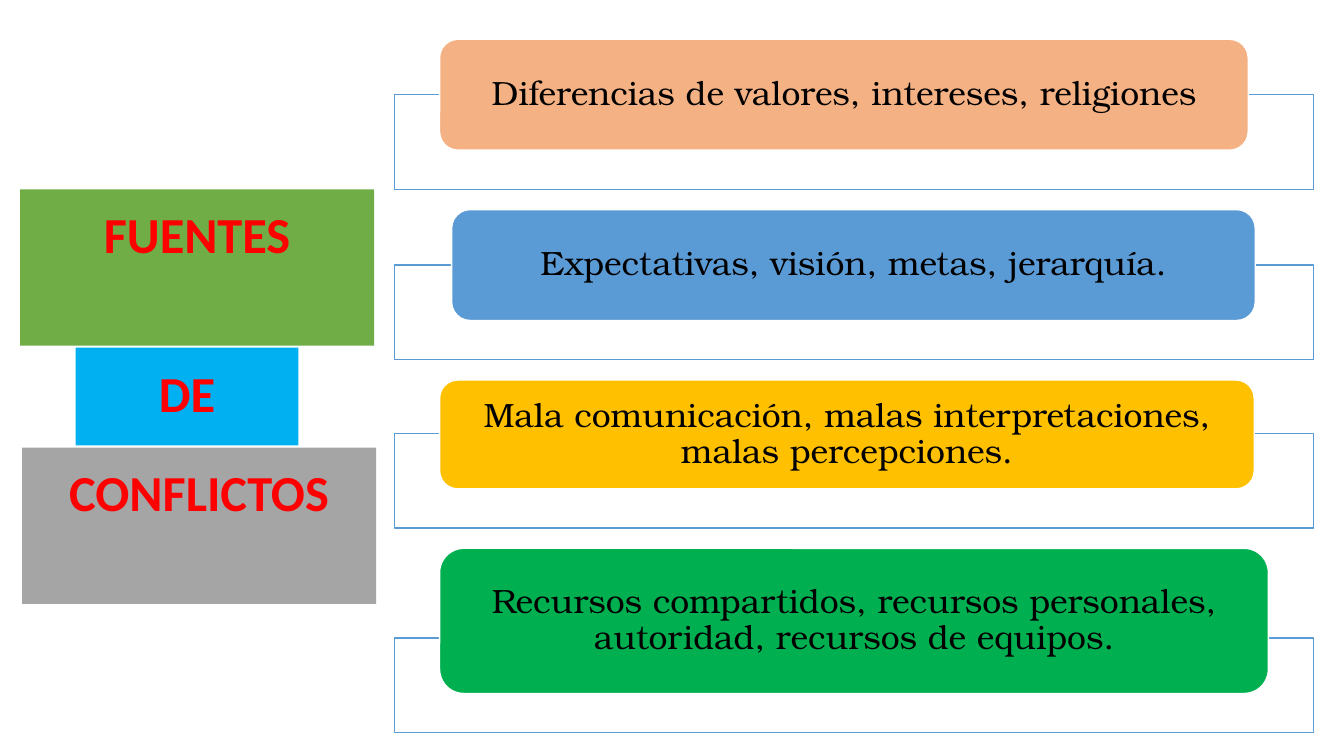
from dataclasses import dataclass
from typing import Any, Optional

from lxml import etree
from pptx import Presentation
from pptx import util as u
from pptx.dml.color import RGBColor
from pptx.enum import shapes, text
from pptx.oxml import ns

COLORS = {
    "green": "70AD47", "cyan": "00B0F0", "gray": "A5A5A5",
    "peach": "F4B183", "blue": "5B9BD5", "amber": "FFC000", "emerald": "00B050",
    "white": "FFFFFF", "red": "FF0000", "black": "000000",
}

FRAME_LEFT, FRAME_WIDTH, FRAME_HEIGHT = 3.91, 9.12, 0.94
FRAME_OVERLAP = 0.55  # how far each bar reaches down into its frame

TITLE_FORMAT = {
    "frame": {"word_wrap": False, "vertical_anchor": text.MSO_ANCHOR.TOP},
    "paragraph": {"alignment": text.PP_ALIGN.CENTER, "line_spacing": 1.15,
                  "space_after": u.Pt(10)},
    "font": {"name": "Calibri", "size": u.Pt(36), "bold": True},
    "color": "red",
}
SOURCE_FORMAT = {
    "frame": {"word_wrap": True, "vertical_anchor": text.MSO_ANCHOR.MIDDLE,
              "margin_left": u.Inches(0.24), "margin_right": u.Inches(0.24),
              "margin_top": 0, "margin_bottom": 0},
    "paragraph": {"alignment": text.PP_ALIGN.CENTER, "line_spacing": 0.9},
    "font": {"name": "TeX Gyre Bonum", "size": u.Pt(24)},
    "color": "black",
}


@dataclass
class Block:
    words: str
    left: float
    top: float
    width: float
    height: float
    fill: str


TITLE_BLOCKS = [
    Block("FUENTES", 0.2, 1.88, 3.51, 1.55, "green"),
    Block("DE", 0.75, 3.45, 2.21, 0.97, "cyan"),
    Block("CONFLICTOS", 0.22, 4.44, 3.51, 1.55, "gray"),
]
CONFLICT_SOURCES = [
    Block("Diferencias de valores, intereses, religiones",
          4.36, 0.39, 8.02, 1.1, "peach"),
    Block("Expectativas, visión, metas, jerarquía.",
          4.48, 2.08, 7.97, 1.1, "blue"),
    Block("Mala comunicación, malas interpretaciones, malas percepciones.",
          4.36, 3.77, 8.08, 1.08, "amber"),
    Block("Recursos compartidos, recursos personales, autoridad, recursos de equipos.",
          4.36, 5.44, 8.22, 1.44, "emerald"),
]


def rgb(name: str) -> RGBColor:
    return RGBColor.from_string(COLORS[name])


def apply(target: Any, values: dict) -> None:
    for attribute, value in values.items():
        setattr(target, attribute, value)


def draw_block(slide: Any, block: Block, kind: Any, line: Optional[str] = None) -> Any:
    shape = slide.shapes.add_shape(
        kind, *map(u.Inches, (block.left, block.top, block.width, block.height)))
    shape.shadow.inherit = False
    shape.fill.solid()
    shape.fill.fore_color.rgb = rgb(block.fill)
    if line:
        shape.line.color.rgb = rgb(line)
        shape.line.width = u.Pt(1)
    else:
        shape.line.fill.background()
    return shape


def write_words(shape: Any, words: str, style: dict) -> None:
    apply(shape.text_frame, style["frame"])
    paragraph = shape.text_frame.paragraphs[0]
    apply(paragraph, style["paragraph"])
    run = paragraph.add_run()
    run.text = words
    apply(run.font, style["font"])
    run.font.color.rgb = rgb(style["color"])


def draw_frame(slide: Any, source: Block) -> None:
    top = source.top + source.height - FRAME_OVERLAP
    outline = Block("", FRAME_LEFT, top, FRAME_WIDTH, FRAME_HEIGHT, "white")
    frame = draw_block(slide, outline, shapes.MSO_SHAPE.RECTANGLE, "blue")
    # Fill at 90 % opacity
    fill_color = frame.fill._xPr.find(ns.qn("a:solidFill"))[0]
    etree.SubElement(fill_color, ns.qn("a:alpha")).set("val", "90000")


def main() -> None:
    deck = Presentation()
    deck.slide_width, deck.slide_height = u.Inches(13.33), u.Inches(7.5)
    slide = deck.slides.add_slide(deck.slide_layouts[6])

    # Stacked title on the left
    for block in TITLE_BLOCKS:
        title = draw_block(slide, block, shapes.MSO_SHAPE.RECTANGLE)
        write_words(title, block.words, TITLE_FORMAT)

    # Sources of conflict, each bar over its frame
    for source in CONFLICT_SOURCES:
        draw_frame(slide, source)
        bar = draw_block(slide, source, shapes.MSO_SHAPE.ROUNDED_RECTANGLE, "white")
        write_words(bar, source.words, SOURCE_FORMAT)

    deck.save("out.pptx")


if __name__ == "__main__":
    main()
